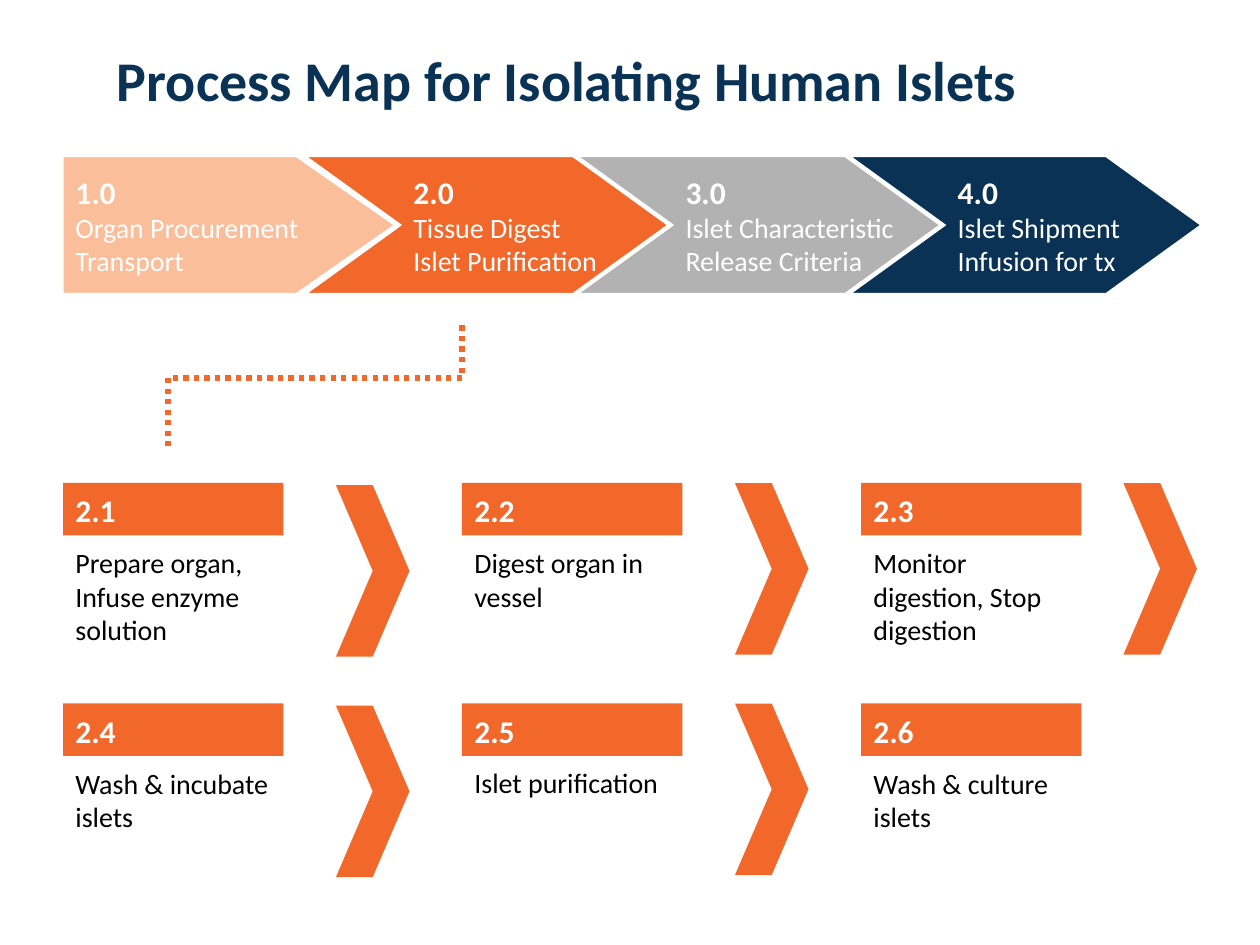
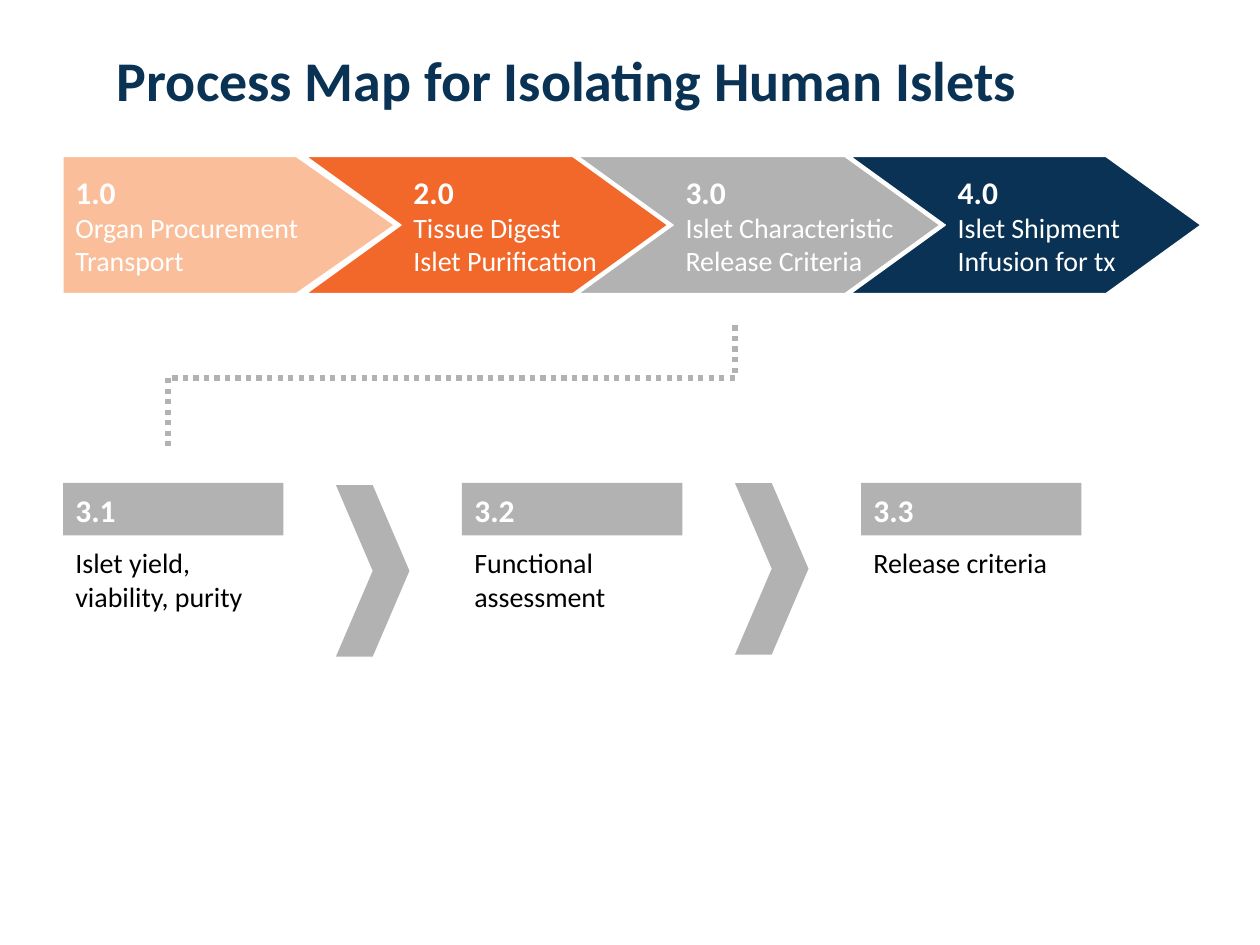
from lxml import etree
from pptx import Presentation
from pptx.dml.color import RGBColor
from pptx.enum import dml, shapes, text
from pptx.oxml import ns
from pptx.util import Pt

COLOURS = {
    "navy": "093254",
    "orange": "F2682B",
    "peach": "FBBE9A",
    "grey": "B2B2B2",
    "white": "FFFFFF",
    "black": "000000",
}
FONT = "Calibri"
TITLE = "Process Map for Isolating Human Islets"

# Stage: left, width, colour, number, lines
STAGES = [
    (36, 189.4, "peach", "1.0", ["Organ Procurement", "Transport"]),
    (175, 206.6, "orange", "2.0", ["Tissue Digest", "Islet Purification"]),
    (330.5, 206.6, "grey", "3.0", ["Islet Characteristic", "Release Criteria"]),
    (486, 200.2, "navy", "4.0", ["Islet Shipment", "Infusion for tx"]),
]

# Step: number, description, lines it takes up
DIGEST_STEPS = [
    ("2.1", "Prepare organ, Infuse enzyme solution", 3),
    ("2.2", "Digest organ in vessel", 2),
    ("2.3", "Monitor digestion, Stop digestion", 3),
    ("2.4", "Wash & incubate islets", 2),
    ("2.5", "Islet purification", 1),
    ("2.6", "Wash & culture islets", 2),
]
RELEASE_STEPS = [
    ("3.1", "Islet yield, viability, purity", 2),
    ("3.2", "Functional assessment", 2),
    ("3.3", "Release criteria", 1),
]

COLUMNS = 3
COLUMN_STEP, ROW_STEP = 228, 126
STEP_WIDTH, BAR_HEIGHT = 126, 30


def rgb(name):
    return RGBColor.from_string(COLOURS[name])


def write(box, words, size=16, bold=False, colour="black", align=None):
    """Add one paragraph, using the empty first one if it is free."""
    frame = box.text_frame
    para = frame.paragraphs[0]
    if para.runs:
        para = frame.add_paragraph()
    para.alignment = align or text.PP_ALIGN.LEFT
    span = para.add_run()
    span.text = words
    span.font.name = FONT
    span.font.size = Pt(size)
    span.font.bold = bold
    span.font.color.rgb = rgb(colour)


def add_text_box(page, left, top, width, height, words, grow=True, **style):
    box = page.shapes.add_textbox(Pt(left), Pt(top), Pt(width), Pt(height))
    box.text_frame.word_wrap = True
    if grow:
        box.text_frame.auto_size = text.MSO_AUTO_SIZE.SHAPE_TO_FIT_TEXT
    write(box, words, **style)
    return box


def add_block(page, kind, left, top, width, height, fill, outline=None):
    block = page.shapes.add_shape(kind, Pt(left), Pt(top), Pt(width), Pt(height))
    block.shadow.inherit = False
    block.fill.solid()
    block.fill.fore_color.rgb = rgb(fill)
    if outline:
        block.line.color.rgb = rgb(outline)
        block.line.width = Pt(0.75)
    else:
        block.line.fill.background()
    return block


def add_title(page, left, top, width, height):
    box = add_text_box(page, left, top, width, height, TITLE, grow=False, size=32,
                       bold=True, colour="navy", align=text.PP_ALIGN.CENTER)
    box.text_frame.vertical_anchor = text.MSO_ANCHOR.MIDDLE


def add_stage_band(page, top, height):
    for index, (left, width, colour, number, lines) in enumerate(STAGES):
        first = index == 0
        kind = shapes.MSO_SHAPE.CHEVRON if index else shapes.MSO_SHAPE.PENTAGON
        arrow = add_block(page, kind, left, top, width, height, colour, outline="white")
        arrow.adjustments[0] = 0.716 if first else 0.692
        arrow.text_frame.word_wrap = False
        arrow.text_frame.vertical_anchor = text.MSO_ANCHOR.MIDDLE
        write(arrow, number, size=18, bold=True, colour="white")
        for line in lines:
            write(arrow, line, colour="white")


def add_dotted_path(page, points, colour):
    for (x1, y1), (x2, y2) in zip(points, points[1:]):
        line = page.shapes.add_connector(
            shapes.MSO_CONNECTOR.STRAIGHT, Pt(x1), Pt(y1), Pt(x2), Pt(y2))
        line.line.color.rgb = rgb(colour)
        line.line.width = Pt(3)
        line.line.dash_style = dml.MSO_LINE.ROUND_DOT
        etree.SubElement(line._element.spPr, ns.qn("a:effectLst"))


def add_step(page, left, top, step, colour):
    number, words, line_count = step
    add_block(page, shapes.MSO_SHAPE.RECTANGLE, left, top, STEP_WIDTH, BAR_HEIGHT, colour)
    add_text_box(page, left, top + 1.2, 108, 29, number,
                 size=18, bold=True, colour="white")
    add_text_box(page, left, top + 32.2, STEP_WIDTH, 7.2 + 19.4 * line_count, words)


def add_step_grid(page, left, top, steps, colour):
    for index, step in enumerate(steps):
        row, column = divmod(index, COLUMNS)
        x, y = left + column * COLUMN_STEP, top + row * ROW_STEP
        add_step(page, x, y, step, colour)
        # Arrow to the next step; the outer columns sit slightly off the grid
        if index < len(steps) - 1:
            offset = 150 if column == COLUMNS - 1 else 156
            drop = 1.2 if column == 0 else 0
            add_block(page, shapes.MSO_SHAPE.CHEVRON, x + offset, y + drop, 42, 98, colour)


def add_process_page(deck, steps, colour, path_start):
    page = deck.slides.add_slide(deck.slide_layouts[6])
    add_title(page, 0, 0, 648, 90)
    # Dotted path from the stage down to its first step
    add_dotted_path(page, [(path_start, 186), (path_start, 216), (96, 216), (96, 258)], colour)
    add_step_grid(page, 36, 276, steps, colour)
    add_stage_band(page, 89.5, 78.3)


def main():
    deck = Presentation()
    deck.slide_width, deck.slide_height = Pt(720), Pt(540)
    add_process_page(deck, DIGEST_STEPS, "orange", path_start=264)
    add_process_page(deck, RELEASE_STEPS, "grey", path_start=420)
    deck.save("out.pptx")


if __name__ == "__main__":
    main()
